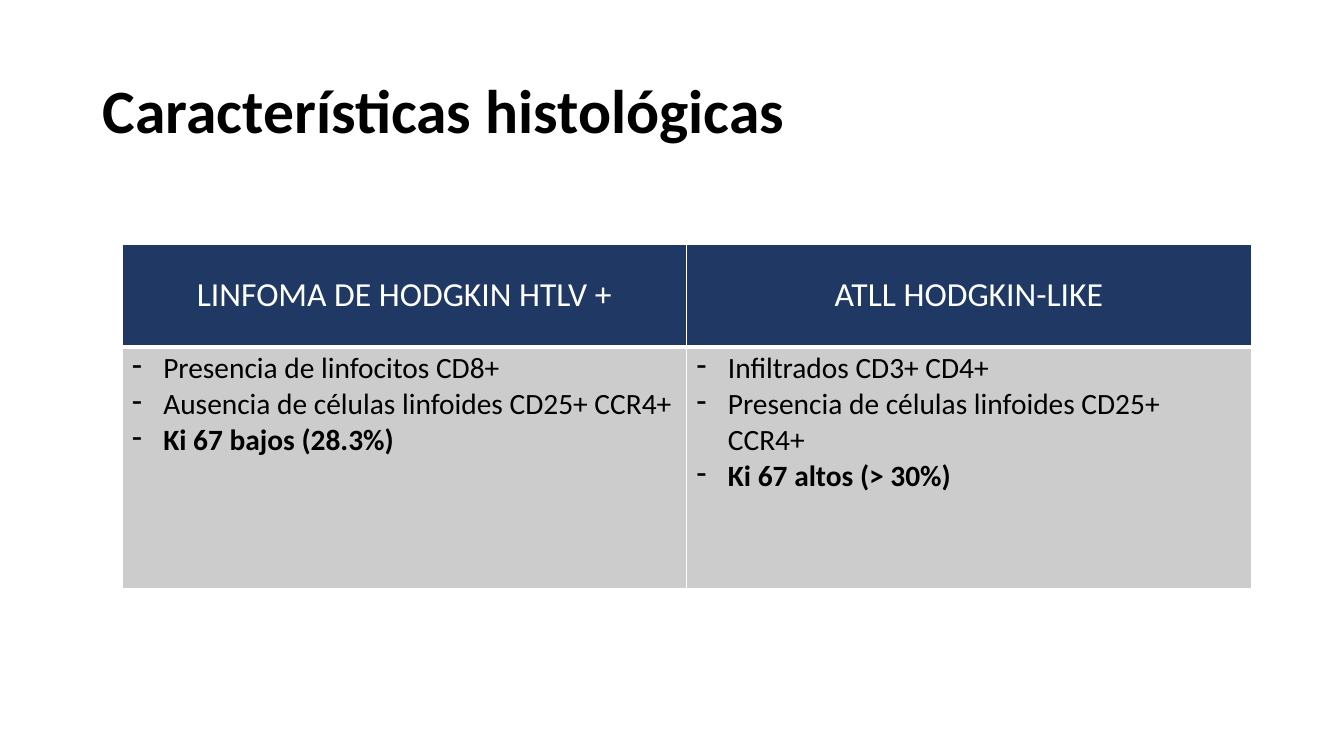
"""Build the slide on histological features with its comparison table."""
from lxml import etree
from pptx import Presentation
from pptx import util as u
from pptx.dml.color import RGBColor
from pptx.enum import text
from pptx.oxml import ns

BLACK = RGBColor(0x00, 0x00, 0x00)
WHITE = RGBColor(0xFF, 0xFF, 0xFF)
NAVY = RGBColor(0x20, 0x38, 0x64)
GRAY = RGBColor(0xCC, 0xCC, 0xCC)
FONT = "Calibri"

HEADERS = ["LINFOMA DE HODGKIN HTLV +", "ATLL HODGKIN-LIKE"]
FEATURES = [
    ["Presencia de linfocitos CD8+",
     "Ausencia de células linfoides CD25+ CCR4+",
     "Ki 67 bajos (28.3%)"],
    ["Infiltrados CD3+ CD4+",
     "Presencia de células linfoides CD25+ CCR4+",
     "Ki 67 altos (> 30%)"],
]


def write(p, content, size, color=BLACK, bold=False, align=text.PP_ALIGN.LEFT):
    """Add one formatted run to a paragraph."""
    p.alignment = align
    r = p.add_run()
    r.text = content
    r.font.name = FONT
    r.font.size = u.Pt(size)
    r.font.bold = bold
    r.font.color.rgb = color


def add_bullet(p, char, indent):
    """Give a paragraph a hanging bullet."""
    pPr = p._p.get_or_add_pPr()
    pPr.set("marL", str(indent))
    pPr.set("indent", str(-indent))
    etree.SubElement(pPr, ns.qn("a:buChar")).set("char", char)


def set_borders(cell, color, **widths):
    """Draw the cell's sides L, R, T and B with widths in points."""
    tcPr = cell._tc.get_or_add_tcPr()
    for index, side in enumerate("LRTB"):
        ln = etree.Element(ns.qn(f"a:ln{side}"), w=str(u.Pt(widths.get(side, 1))))
        fill = etree.SubElement(ln, ns.qn("a:solidFill"))
        etree.SubElement(fill, ns.qn("a:srgbClr"), val=str(color))
        tcPr.insert(index, ln)


class SlideBuilder:
    """Hold the slide and add its styled elements."""

    def __init__(self, prs):
        self.slide = prs.slides.add_slide(prs.slide_layouts[5])

    def title(self, content, box):
        sp = self.slide.shapes.title
        sp.left, sp.top, sp.width, sp.height = map(u.Inches, box)
        tf = sp.text_frame
        tf.word_wrap = True
        tf.auto_size = text.MSO_AUTO_SIZE.NONE
        tf.vertical_anchor = text.MSO_ANCHOR.MIDDLE
        p = tf.paragraphs[0]
        p.line_spacing = 0.9
        write(p, content, 44, bold=True)

    def table(self, headers, columns, box, row_heights):
        frame = self.slide.shapes.add_table(2, len(headers), *map(u.Inches, box))
        table = frame.table
        for row, height in zip(table.rows, row_heights):
            row.height = u.Inches(height)
        for col, (header, items) in enumerate(zip(headers, columns)):
            self.header_cell(table.cell(0, col), header)
            self.list_cell(table.cell(1, col), items)

    def style_cell(self, cell, fill, anchor, **borders):
        cell.fill.solid()
        cell.fill.fore_color.rgb = fill
        cell.vertical_anchor = anchor
        cell.margin_left = cell.margin_right = u.Inches(0.1)
        cell.margin_top = cell.margin_bottom = u.Inches(0.04)
        set_borders(cell, WHITE, **borders)

    def header_cell(self, cell, content):
        self.style_cell(cell, NAVY, text.MSO_ANCHOR.MIDDLE, B=3)
        write(cell.text_frame.paragraphs[0], content, 24, WHITE,
              align=text.PP_ALIGN.CENTER)

    def list_cell(self, cell, items):
        self.style_cell(cell, GRAY, text.MSO_ANCHOR.TOP)
        tf = cell.text_frame
        for i, item in enumerate(items):
            p = tf.add_paragraph() if i else tf.paragraphs[0]
            write(p, item, 21, bold=i == len(items) - 1)
            add_bullet(p, "-", u.Inches(0.31))


def main():
    prs = Presentation()
    prs.slide_width, prs.slide_height = u.Inches(13.33), u.Inches(7.5)
    s = SlideBuilder(prs)
    s.title("Características histológicas", (0.92, 0.4, 11.5, 1.45))
    s.table(HEADERS, FEATURES, (1.21, 2.42, 11.2, 3.42), (1.02, 2.4))
    prs.save("out.pptx")


if __name__ == "__main__":
    main()
